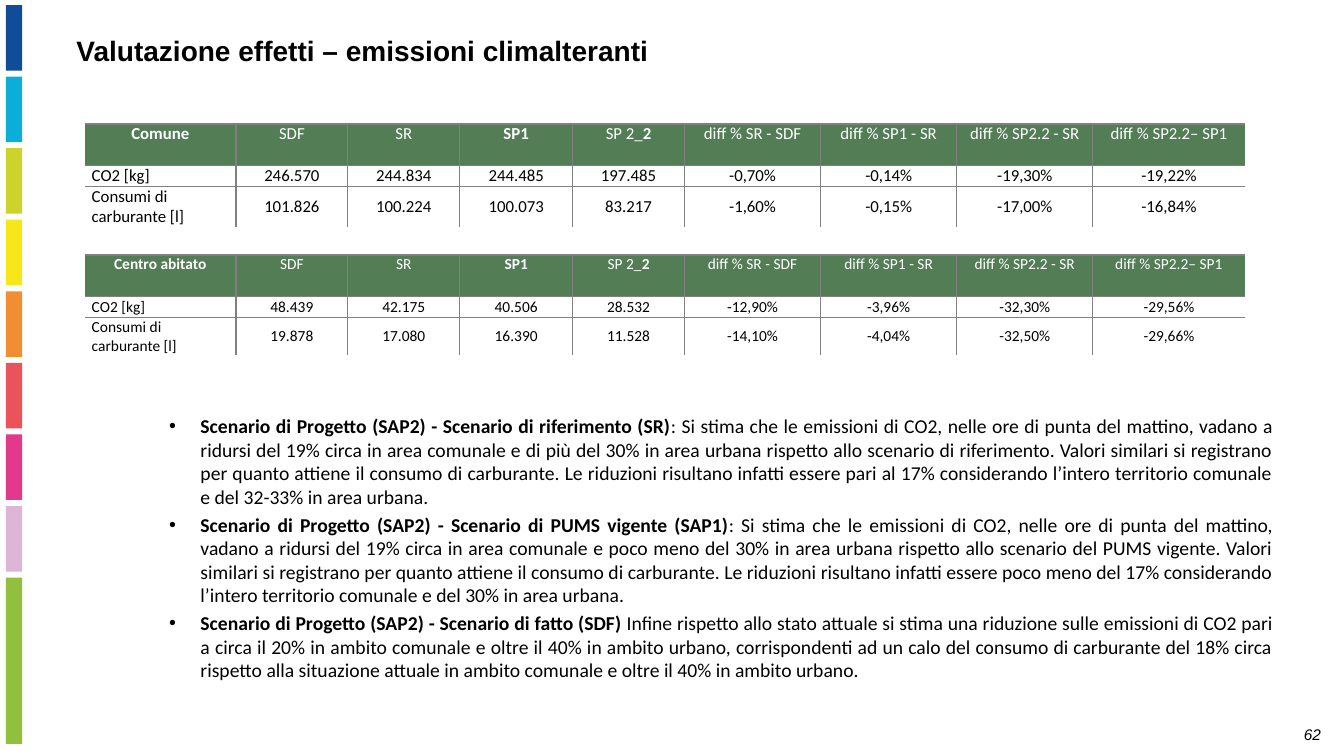
"""Build the slide on the effects on climate-altering emissions."""
from lxml import etree
from pptx import Presentation
from pptx.dml.color import RGBColor
from pptx.enum.shapes import MSO_SHAPE
from pptx.enum.text import MSO_ANCHOR, PP_ALIGN
from pptx.oxml.ns import qn
from pptx.util import Inches, Pt

RECT = MSO_SHAPE.RECTANGLE
TOP, MIDDLE = MSO_ANCHOR.TOP, MSO_ANCHOR.MIDDLE
LEFT, CENTER, RIGHT, JUSTIFY = PP_ALIGN.LEFT, PP_ALIGN.CENTER, PP_ALIGN.RIGHT, PP_ALIGN.JUSTIFY

BLACK, WHITE, GREEN, GRAY = "000000", "FFFFFF", "527D55", "808080"
BARS = ["104C98", "0BAED7", "CCD32A", "F6E719", "F28E32", "EB535B", "E2398D", "DCB6D4", "90C03E"]
TITLE = "Valutazione effetti – emissioni climalteranti"
PAGE = "62"

HEADS = [
    [("SDF", False)],
    [("SR", False)],
    [("SP1", True)],
    [("SP 2_", False), ("2", True)],
    [("diff % SR - SDF", False)],
    [("diff % SP1 - SR", False)],
    [("diff % SP2.2 - SR", False)],
    [("diff % SP2.2– SP1", False)],
]
LABELS = ["CO2 [kg]", "Consumi di carburante [l]"]
TABLES = [
    {"name": "Comune", "top": 1.23, "size": 12, "rows": [
        ["246.570", "244.834", "244.485", "197.485", "-0,70%", "-0,14%", "-19,30%", "-19,22%"],
        ["101.826", "100.224", "100.073", "83.217", "-1,60%", "-0,15%", "-17,00%", "-16,84%"]]},
    {"name": "Centro abitato", "top": 2.53, "size": 11, "rows": [
        ["48.439", "42.175", "40.506", "28.532", "-12,90%", "-3,96%", "-32,30%", "-29,56%"],
        ["19.878", "17.080", "16.390", "11.528", "-14,10%", "-4,04%", "-32,50%", "-29,66%"]]},
]
WIDTHS = [1.5, 1.11, 1.11, 1.12, 1.11, 1.35, 1.35, 1.35, 1.51]
HEIGHTS = [0.41, 0.21, 0.36]

NOTES = [
    ("Scenario di Progetto (SAP2) - Scenario di riferimento (SR)",
     ": Si stima che le emissioni di CO2, nelle ore di punta del mattino, vadano a ridursi del 19% "
     "circa in area comunale e di più del 30% in area urbana rispetto allo scenario di riferimento. "
     "Valori similari si registrano per quanto attiene il consumo di carburante. Le riduzioni "
     "risultano infatti essere pari al 17% considerando l’intero territorio comunale e del 32-33% "
     "in area urbana."),
    ("Scenario di Progetto (SAP2) - Scenario di PUMS vigente (SAP1)",
     ": Si stima che le emissioni di CO2, nelle ore di punta del mattino, vadano a ridursi del 19% "
     "circa in area comunale e poco meno del 30% in area urbana rispetto allo scenario del PUMS "
     "vigente. Valori similari si registrano per quanto attiene il consumo di carburante. Le "
     "riduzioni risultano infatti essere poco meno del 17% considerando l’intero territorio "
     "comunale e del 30% in area urbana."),
    ("Scenario di Progetto (SAP2) - Scenario di fatto (SDF) ",
     "Infine rispetto allo stato attuale si stima una riduzione sulle emissioni di CO2 pari a circa "
     "il 20% in ambito comunale e oltre il 40% in ambito urbano, corrispondenti ad un calo del "
     "consumo di carburante del 18% circa rispetto alla situazione attuale in ambito comunale e "
     "oltre il 40% in ambito urbano."),
]


def paint(fill, color):
    fill.solid()
    fill.fore_color.rgb = RGBColor.from_string(color)


def write(para, runs, size, color=BLACK, face="Calibri", italic=False):
    for text, bold in runs:
        run = para.add_run()
        run.text = text
        style = {"name": face, "size": Pt(size), "bold": bold, "italic": italic}
        for key, value in style.items():
            setattr(run.font, key, value)
        run.font.color.rgb = RGBColor.from_string(color)


def add_box(slide, left, top, width, height):
    box = slide.shapes.add_textbox(Inches(left), Inches(top), Inches(width), Inches(height))
    box.text_frame.word_wrap = True
    return box.text_frame


def add_edges(cell, shown):
    props = cell._tc.get_or_add_tcPr()
    for side in "LRTB":
        line = etree.SubElement(props, qn(f"a:ln{side}"), w=str(Pt(1)))
        if side in shown:
            fill = etree.SubElement(line, qn("a:solidFill"))
            etree.SubElement(fill, qn("a:srgbClr"), val=GRAY)
        else:
            etree.SubElement(line, qn("a:noFill"))


def add_grid(slide, data):
    rows = [[[(data["name"], True)]] + HEADS]
    for label, values in zip(LABELS, data["rows"]):
        rows.append([[(text, False)] for text in [label] + values])
    frame = slide.shapes.add_table(len(rows), len(WIDTHS), Inches(0.84), Inches(data["top"]),
                                   Inches(sum(WIDTHS)), Inches(sum(HEIGHTS)))
    table = frame.table
    table.first_row = table.horz_banding = False
    for col, width in zip(table.columns, WIDTHS):
        col.width = Inches(width)
    for row, height in zip(table.rows, HEIGHTS):
        row.height = Inches(height)
    for r, row in enumerate(rows):
        for c, runs in enumerate(row):
            cell = table.cell(r, c)
            head, first = r == 0, c == 0
            low = r == len(rows) - 1
            last = c == len(WIDTHS) - 1
            add_edges(cell, "T" + "L" * (not first) + "R" * (not last) + "B" * (not low))
            if head:
                paint(cell.fill, GREEN)
            else:
                cell.fill.background()
            form = {"margin_left": Inches(0.07), "margin_right": Inches(0.07),
                    "margin_top": 0, "margin_bottom": 0,
                    "vertical_anchor": TOP if head or (low and first) else MIDDLE}
            for key, value in form.items():
                setattr(cell, key, value)
            para = cell.text_frame.paragraphs[0]
            para.alignment = LEFT if first and not head else CENTER
            write(para, runs, data["size"], WHITE if head else BLACK)


def add_notes(slide):
    frame = add_box(slide, 1.08, 4.06, 11.65, 2.78)
    for i, (lead, text) in enumerate(NOTES):
        para = frame.add_paragraph() if i else frame.paragraphs[0]
        para.alignment, para.level = JUSTIFY, 1
        para.space_before = Pt(3 if i else 0)
        props = para._p.get_or_add_pPr()
        props.set("marL", str(Inches(0.81)))
        props.set("indent", str(Inches(-0.31)))
        etree.SubElement(props, qn("a:buFont"), typeface="Arial")
        etree.SubElement(props, qn("a:buChar"), char="•")
        write(para, [(lead, True), (text, False)], 14)


def main():
    deck = Presentation()
    deck.slide_width, deck.slide_height = Inches(13.33), Inches(7.5)
    slide = deck.slides.add_slide(deck.slide_layouts[6])

    for i, color in enumerate(BARS):
        height = 1.65 if i == len(BARS) - 1 else 0.65
        bar = slide.shapes.add_shape(RECT, Inches(0.06), Inches(0.05 + 0.71 * i),
                                     Inches(0.16), Inches(height))
        bar.shadow.inherit = False
        bar.line.fill.background()
        paint(bar.fill, color)

    title = add_box(slide, 0.66, 0.35, 10.43, 0.6).paragraphs[0]
    title.line_spacing = 0.8
    write(title, [(TITLE, True)], 20, face="Arial")

    for data in TABLES:
        add_grid(slide, data)
    add_notes(slide)

    page = add_box(slide, 12.02, 7.14, 1.18, 0.29).paragraphs[0]
    page.alignment = RIGHT
    write(page, [(PAGE, False)], 11, face="Arial", italic=True)
    deck.save("out.pptx")


if __name__ == "__main__":
    main()
